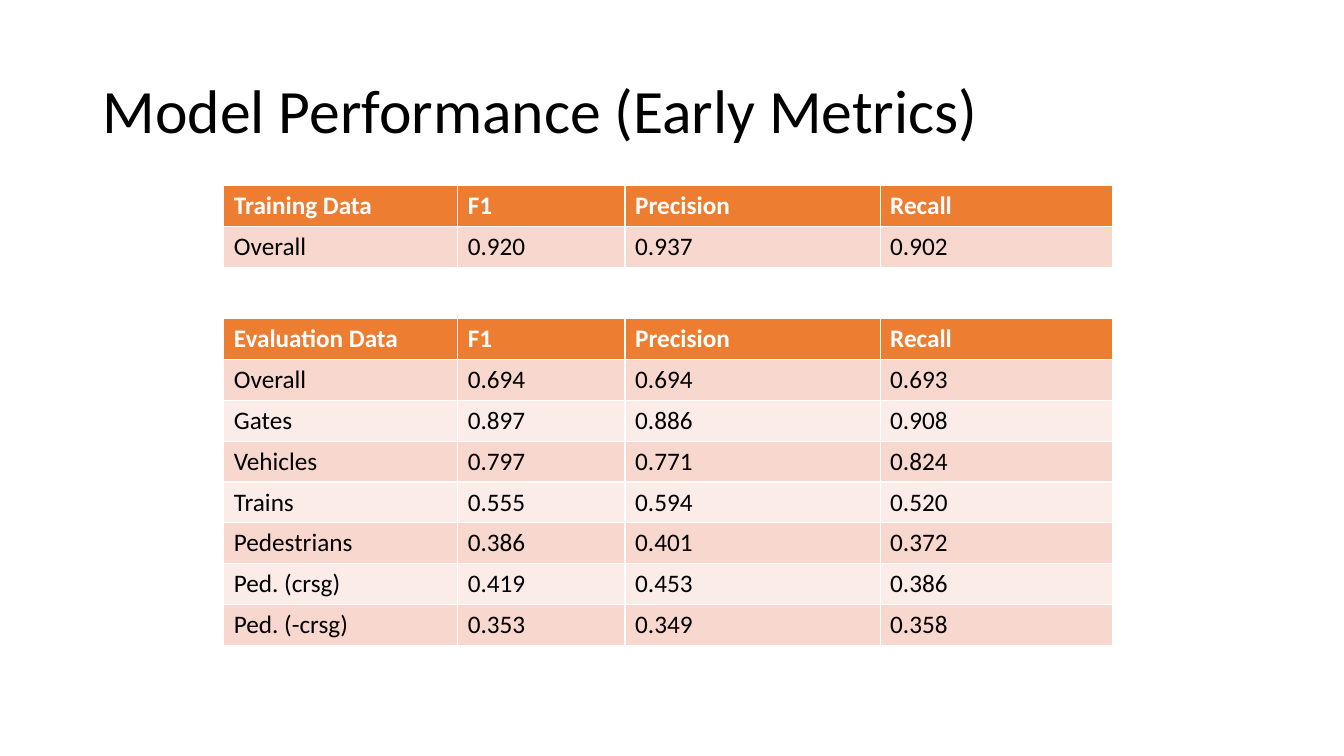
"""Build a slide with training and evaluation metrics in two tables."""
from pptx import Presentation
from pptx.dml.color import RGBColor
from pptx.enum.text import MSO_ANCHOR, PP_ALIGN
from pptx.util import Inches, Pt

COLUMN_WIDTHS = [2.32, 1.66, 2.53, 2.31]
ROW_HEIGHT = 0.405
TABLE_LEFT = 2.22
METRICS = ["F1", "Precision", "Recall"]
HEADER_FILL = "ED7D31"
BAND_FILLS = ["FCECE8", "F8D7CE"]

TABLES = [
    (1.84, [
        ["Training Data", *METRICS],
        ["Overall", "0.920", "0.937", "0.902"],
    ]),
    (3.16, [
        ["Evaluation Data", *METRICS],
        ["Overall", "0.694", "0.694", "0.693"],
        ["Gates", "0.897", "0.886", "0.908"],
        ["Vehicles", "0.797", "0.771", "0.824"],
        ["Trains", "0.555", "0.594", "0.520"],
        ["Pedestrians", "0.386", "0.401", "0.372"],
        ["Ped. (crsg)", "0.419", "0.453", "0.386"],
        ["Ped. (-crsg)", "0.353", "0.349", "0.358"],
    ]),
]


def color(hex_string):
    return RGBColor.from_string(hex_string)


def add_span(para, text, size, hex_string, bold=False):
    span = para.add_run()
    span.text = text
    span.font.name = "Calibri"
    span.font.size = Pt(size)
    span.font.bold = bold
    span.font.color.rgb = color(hex_string)


deck = Presentation()
deck.slide_width = Inches(13.33)
deck.slide_height = Inches(7.5)
page = deck.slides.add_slide(deck.slide_layouts[5])

title = page.shapes.title
title.left, title.top = Inches(0.92), Inches(0.4)
title.width, title.height = Inches(11.5), Inches(1.45)
title.text_frame.word_wrap = True
title.text_frame.vertical_anchor = MSO_ANCHOR.MIDDLE
title_para = title.text_frame.paragraphs[0]
title_para.alignment = PP_ALIGN.LEFT
title_para.line_spacing = 0.9
add_span(title_para, "Model Performance (Early Metrics)", 44, "000000")

for top, rows in TABLES:
    frame = page.shapes.add_table(
        len(rows), len(COLUMN_WIDTHS), Inches(TABLE_LEFT), Inches(top),
        Inches(sum(COLUMN_WIDTHS)), Inches(ROW_HEIGHT * len(rows)))
    table = frame.table
    for column, width in zip(table.columns, COLUMN_WIDTHS):
        column.width = Inches(width)
    for row_index, values in enumerate(rows):
        is_header = row_index == 0
        fill = HEADER_FILL if is_header else BAND_FILLS[row_index % 2]
        for column_index, value in enumerate(values):
            cell = table.cell(row_index, column_index)
            cell.fill.solid()
            cell.fill.fore_color.rgb = color(fill)
            add_span(cell.text_frame.paragraphs[0], value, 18,
                     "FFFFFF" if is_header else "000000", is_header)

deck.save("out.pptx")
